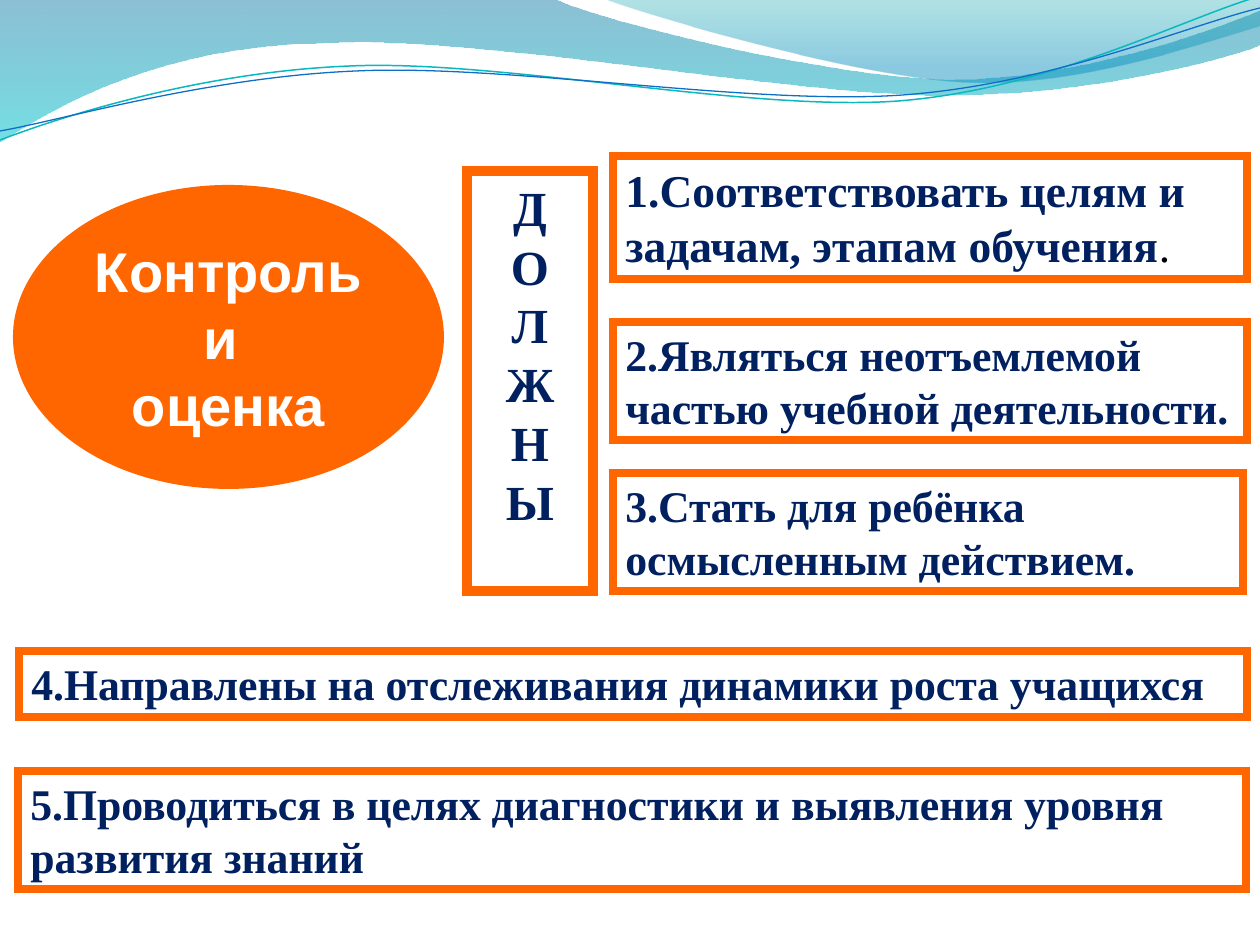
from dataclasses import dataclass

from lxml import etree
from pptx import Presentation
from pptx.dml.color import RGBColor
from pptx.enum.shapes import MSO_SHAPE
from pptx.enum.text import MSO_ANCHOR, PP_ALIGN
from pptx.oxml.ns import qn
from pptx.util import Emu, Pt

RECT, OVAL = MSO_SHAPE.RECTANGLE, MSO_SHAPE.OVAL
LEFT, CENTER = PP_ALIGN.LEFT, PP_ALIGN.CENTER
TOP, MIDDLE = MSO_ANCHOR.TOP, MSO_ANCHOR.MIDDLE

ORANGE = RGBColor(0xFF, 0x66, 0x00)
NAVY = RGBColor(0x00, 0x20, 0x60)
WHITE = RGBColor(0xFF, 0xFF, 0xFF)
BLACK = RGBColor(0x00, 0x00, 0x00)
DEEP_BLUE = RGBColor(0x00, 0x74, 0xA1)
AQUA = RGBColor(0x00, 0xC6, 0xCF)
SEA_GREEN = RGBColor(0x00, 0xA1, 0xA9)
SKY = RGBColor(0x00, 0x8B, 0xBF)
TEAL = RGBColor(0x0A, 0xB8, 0xBF)
BLUE = RGBColor(0x0F, 0x6F, 0xC6)

PX = 914400 / 126


@dataclass
class Stop:
    position: float
    color: RGBColor
    opacity: int


@dataclass
class Wave:
    """Path segments hold two numbers for a line, six for a Bézier curve."""
    start: tuple[int, int]
    segments: list[tuple[int, ...]]
    stops: tuple[Stop, ...] = ()
    line: RGBColor | None = None
    weight: float = 0


@dataclass
class Box:
    x: int
    y: int
    w: int
    h: int
    lines: list[str]
    size: int
    border: float = 4.5
    shape: MSO_SHAPE = RECT
    fill: RGBColor | None = None
    color: RGBColor = NAVY
    font: str = "Times New Roman"
    align: PP_ALIGN = LEFT
    anchor: MSO_ANCHOR = TOP
    plain_end: str = ""


WAVES = [
    Wave((0, 0), [(554, -1), (600, 21, 837, 79, 955, 79),
                  (1074, 79, 1207, 33, 1260, 11), (1261, 45),
                  (1239, 55, 1096, 96, 940, 95), (784, 95, 481, 35, 324, 43),
                  (163, 45, 58, 105, -1, 142)],
         stops=(Stop(0, DEEP_BLUE, 45), Stop(1, AQUA, 55))),
    Wave((604, -1), [(641, 14, 859, 78, 969, 82),
                     (1079, 87, 1211, 40, 1260, 26), (1260, 0)],
         stops=(Stop(0, SEA_GREEN, 30), Stop(0.8, SKY, 45))),
    Wave((0, 140), [(60, 117, 199, 72, 349, 66), (498, 59, 747, 112, 898, 101),
                    (1050, 89, 1182, 19, 1257, -3)], line=TEAL, weight=0.85),
    Wave((0, 131), [(59, 121, 207, 77, 357, 71), (508, 64, 752, 106, 903, 95),
                    (1053, 84, 1186, 26, 1260, 8)], line=BLUE, weight=0.75),
]

BOXES = [
    Box(13, 185, 431, 304, ["Контроль и ", "оценка"], 32, 0, OVAL, ORANGE,
        WHITE, "Arial", CENTER, MIDDLE),
    Box(613, 156, 634, 123,
        ["1.Соответствовать целям и задачам, этапам обучения"], 26,
        plain_end="."),
    Box(467, 171, 126, 420, list("ДОЛЖНЫ"), 28, border=6, align=CENTER),
    Box(613, 322, 634, 118,
        ["2.Являться неотъемлемой частью учебной деятельности."], 25),
    Box(613, 473, 630, 118, ["3.Стать для ребёнка осмысленным действием."], 25),
    Box(19, 651, 1228, 66,
        ["4.Направлены на отслеживания динамики роста учащихся"], 25),
    Box(18, 771, 1228, 118,
        ["5.Проводиться в целях диагностики и выявления уровня развития знаний"],
        25),
]


def px(n: float) -> Emu:
    return Emu(round(n * PX))


def bend(s, wave: Wave) -> None:
    """Turn the straight segments that have control points into curves."""
    sides = list(s._element.spPr.iter(qn("a:lnTo")))
    for side, segment in zip(sides, wave.segments):
        if len(segment) == 2:
            continue
        side.tag = qn("a:cubicBezTo")
        controls = (segment[:2], segment[2:4])
        for i, (x, y) in enumerate(controls):
            pt = etree.Element(qn("a:pt"), x=str(px(x) - s.left),
                               y=str(px(y) - s.top))
            side.insert(i, pt)


def add_wave(slide, wave: Wave) -> None:
    builder = slide.shapes.build_freeform(*map(px, wave.start))
    ends = [(px(seg[-2]), px(seg[-1])) for seg in wave.segments]
    builder.add_line_segments(ends, close=bool(wave.stops))
    s = builder.convert_to_shape()
    bend(s, wave)
    s.shadow.inherit = False
    if not wave.stops:
        s.fill.background()
        s.line.color.rgb = wave.line
        s.line.width = Pt(wave.weight)
        return
    s.line.fill.background()
    s.fill.gradient()
    s.fill.gradient_angle = 270
    for target, stop in zip(s.fill.gradient_stops, wave.stops):
        target.position = stop.position
        target.color.rgb = stop.color
    for clr, stop in zip(s._element.spPr.iter(qn("a:srgbClr")), wave.stops):
        etree.SubElement(clr, qn("a:alpha"), val=str(stop.opacity * 1000))


def add_run(p, text: str, box: Box, color: RGBColor, bold: bool) -> None:
    r = p.add_run()
    r.text = text
    r.font.name = box.font
    r.font.size = Pt(box.size)
    r.font.bold = bold
    r.font.color.rgb = color


def add_box(slide, box: Box) -> None:
    s = slide.shapes.add_shape(box.shape, px(box.x), px(box.y),
                               px(box.w), px(box.h))
    s.shadow.inherit = False
    if box.fill is None:
        s.fill.background()
    else:
        s.fill.solid()
        s.fill.fore_color.rgb = box.fill
    if box.border:
        s.line.color.rgb = ORANGE
        s.line.width = Pt(box.border)
        ln = s._element.spPr.find(qn("a:ln"))
        etree.SubElement(ln, qn("a:miter"), lim="800000")
    else:
        s.line.fill.background()
    tf = s.text_frame
    tf.word_wrap = True
    tf.vertical_anchor = box.anchor
    for i, line in enumerate(box.lines):
        p = tf.add_paragraph() if i else tf.paragraphs[0]
        p.alignment = box.align
        add_run(p, line, box, box.color, True)
    if box.plain_end:
        add_run(p, box.plain_end, box, BLACK, False)


def main() -> None:
    prs = Presentation()
    prs.slide_width, prs.slide_height = px(1260), px(945)
    slide = prs.slides.add_slide(prs.slide_layouts[6])
    for wave in WAVES:
        add_wave(slide, wave)
    for box in BOXES:
        add_box(slide, box)
    prs.save("out.pptx")


if __name__ == "__main__":
    main()
